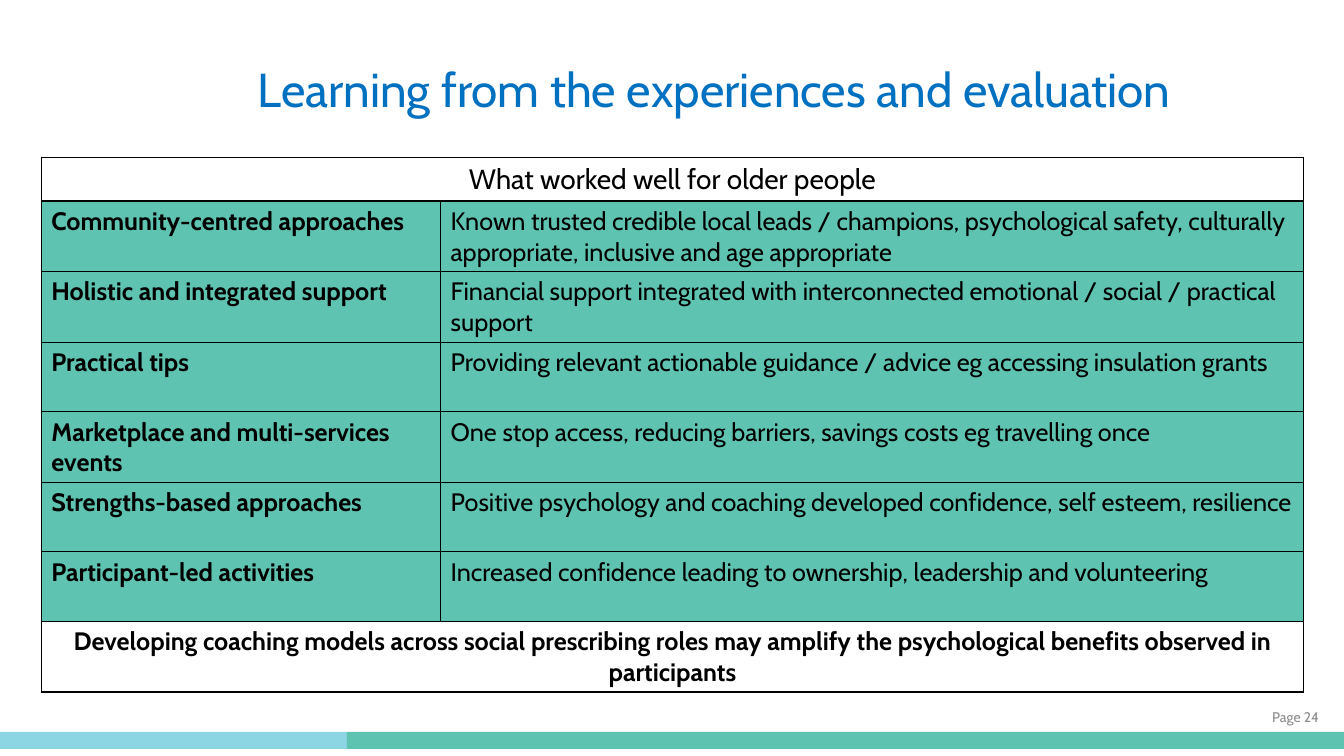
from lxml import etree
from pptx import Presentation
from pptx.dml.color import RGBColor
from pptx.enum.shapes import MSO_SHAPE
from pptx.enum.text import MSO_ANCHOR, PP_ALIGN
from pptx.oxml.ns import qn
from pptx.util import Inches, Pt

RECTANGLE = MSO_SHAPE.RECTANGLE
MIDDLE, BOTTOM = MSO_ANCHOR.MIDDLE, MSO_ANCHOR.BOTTOM
LEFT, CENTER, RIGHT = PP_ALIGN.LEFT, PP_ALIGN.CENTER, PP_ALIGN.RIGHT

WHITE = RGBColor(0xFF, 0xFF, 0xFF)
BLACK = RGBColor(0, 0, 0)
TEAL = RGBColor(0x5F, 0xC3, 0xB1)
SKY = RGBColor(0x8C, 0xD5, 0xE3)
BLUE = RGBColor(0x00, 0x70, 0xC0)
GREY = RGBColor(0x8C, 0x8C, 0x8C)
FONT = "Cabin"

HEADING = "What worked well for older people"
APPROACHES = [
    ("Community-centred approaches",
     "Known trusted credible local leads / champions, psychological safety, "
     "culturally appropriate, inclusive and age appropriate"),
    ("Holistic and integrated support",
     "Financial support integrated with interconnected emotional / social / "
     "practical support"),
    ("Practical tips",
     "Providing relevant actionable guidance / advice eg accessing insulation grants"),
    ("Marketplace and multi-services events",
     "One stop access, reducing barriers, savings costs eg travelling once"),
    ("Strengths-based approaches",
     "Positive psychology and coaching developed confidence, self esteem, resilience"),
    ("Participant-led activities",
     "Increased confidence leading to ownership, leadership and volunteering"),
]
CONCLUSION = ("Developing coaching models across social prescribing roles may amplify "
              "the psychological benefits observed in participants")


def write_text(text_frame, text, size=18, color=BLACK, bold=False, align=LEFT,
               line_spacing=None):
    text_frame.word_wrap = True
    paragraph = text_frame.paragraphs[0]
    paragraph.alignment = align
    if line_spacing:
        paragraph.line_spacing = line_spacing
    run = paragraph.add_run()
    run.text = text
    run.font.name = FONT
    run.font.size = Pt(size)
    run.font.bold = bold
    run.font.color.rgb = color


def add_rectangle(slide, left, top, width, height, color):
    shape = slide.shapes.add_shape(RECTANGLE, Inches(left), Inches(top),
                                   Inches(width), Inches(height))
    shape.shadow.inherit = False
    shape.fill.solid()
    shape.fill.fore_color.rgb = color
    shape.line.fill.background()
    return shape


def add_footer(slide, left, top, width, height):
    """Place the two-colour band and the page number above it."""
    split = 3.44
    add_rectangle(slide, left, top, split, height, SKY)
    add_rectangle(slide, left + split, top, width - split, height, TEAL)
    page_box = slide.shapes.add_textbox(Inches(left + width - 3.15), Inches(top - 0.41),
                                        Inches(3), Inches(0.4))
    page_box.text_frame.vertical_anchor = BOTTOM
    write_text(page_box.text_frame, "Page 24", size=10, color=GREY, align=RIGHT)


def add_title(slide, left, top, width, height):
    title = add_rectangle(slide, left, top, width, height, WHITE)
    title.text_frame.vertical_anchor = MIDDLE
    write_text(title.text_frame, "Learning from the experiences and evaluation",
               size=34, color=BLUE, line_spacing=0.9)


def style_cell(cell, color):
    """Give the cell black one-point borders and a solid fill."""
    properties = cell._tc.get_or_add_tcPr()
    for side in ("a:lnL", "a:lnR", "a:lnT", "a:lnB"):
        border = etree.SubElement(properties, qn(side), w=str(Pt(1)))
        fill = etree.SubElement(border, qn("a:solidFill"))
        etree.SubElement(fill, qn("a:srgbClr"), val=str(BLACK))
    cell.fill.solid()
    cell.fill.fore_color.rgb = color


def add_findings_table(slide, left, top, width, height):
    last = len(APPROACHES) + 1
    table = slide.shapes.add_table(last + 1, 2, Inches(left), Inches(top),
                                   Inches(width), Inches(height)).table
    label_width = 3.96
    table.columns[0].width = Inches(label_width)
    table.columns[1].width = Inches(width - label_width)
    row_heights = [0.31] + [0.69] * len(APPROACHES) + [0.47]
    for index, row_height in enumerate(row_heights):
        table.rows[index].height = Inches(row_height)
        for cell in table.rows[index].cells:
            style_cell(cell, WHITE if index in (0, last) else TEAL)

    for index in (0, last):
        table.cell(index, 0).merge(table.cell(index, 1))
    write_text(table.cell(0, 0).text_frame, HEADING, size=20, align=CENTER)
    for index, (label, finding) in enumerate(APPROACHES, start=1):
        write_text(table.cell(index, 0).text_frame, label, bold=True)
        write_text(table.cell(index, 1).text_frame, finding)
    write_text(table.cell(last, 0).text_frame, CONCLUSION, bold=True, align=CENTER)


def main():
    presentation = Presentation()
    presentation.slide_width = Inches(13.33)
    presentation.slide_height = Inches(7.5)
    slide = presentation.slides.add_slide(presentation.slide_layouts[6])
    add_footer(slide, 0, 7.26, 13.33, 0.17)
    add_title(slide, 2.46, 0.22, 10.72, 1.38)
    add_findings_table(slide, 0.41, 1.56, 12.52, 5.33)
    presentation.save("out.pptx")


if __name__ == "__main__":
    main()
